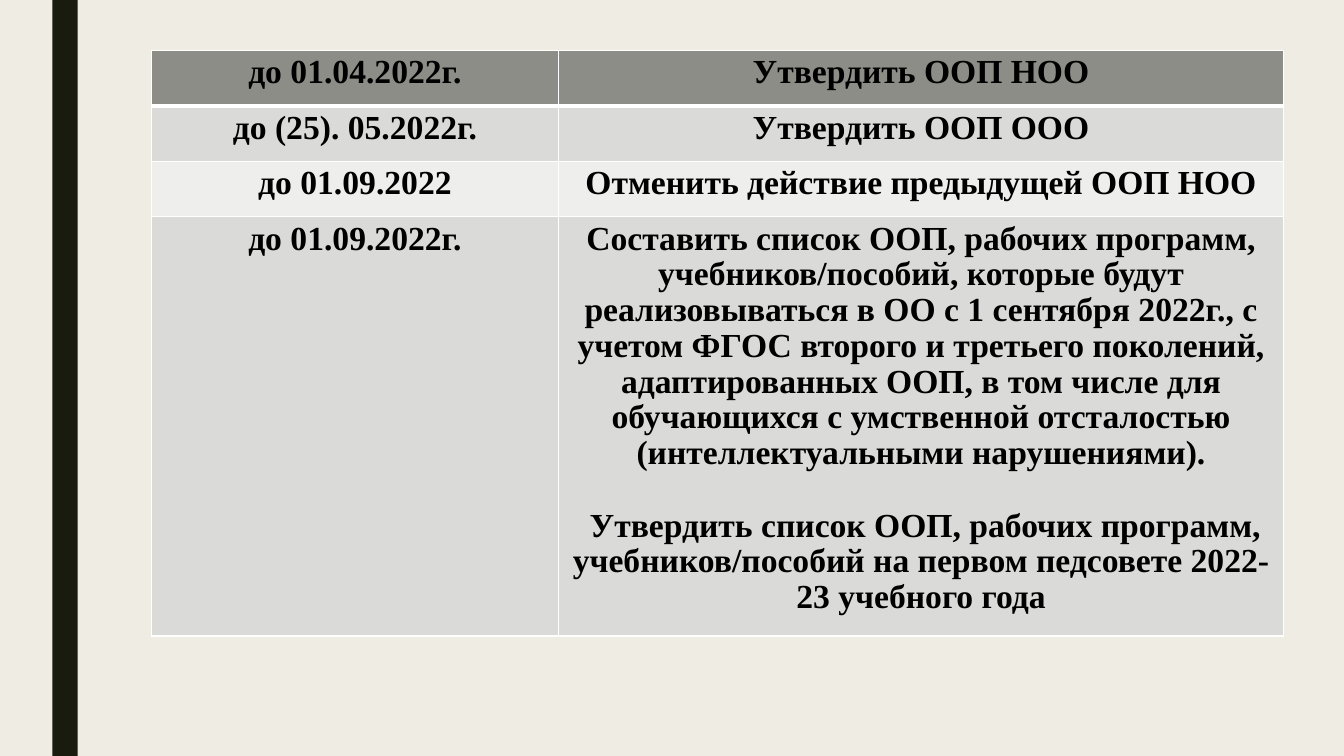
from pptx import Presentation
from pptx import util as u
from pptx.dml.color import RGBColor
from pptx.enum import shapes, text
from pptx.oxml import parse_xml
from pptx.oxml.ns import nsdecls

COLORS = {"page": "EFEDE3", "bar": "191B0E", "head": "8C8D86",
          "odd": "DADBD9", "even": "EEEEED", "rule": "FFFFFF", "ink": "000000"}
FONT = "Times New Roman"
SIZE = u.Pt(24)
LEAD = 0.96  # line spacing

PLAN = [
    ("до 01.04.2022г.", ["Утвердить ООП НОО"]),
    ("до (25). 05.2022г.", ["Утвердить ООП ООО"]),
    ("до 01.09.2022", ["Отменить действие предыдущей ООП НОО"]),
    ("до 01.09.2022г.", [
        "Составить список ООП, рабочих программ, учебников/пособий, которые "
        "будут реализовываться в ОО с 1 сентября 2022г., с учетом ФГОС второго "
        "и третьего поколений, адаптированных ООП, в том числе для обучающихся "
        "с умственной отсталостью (интеллектуальными нарушениями).",
        " Утвердить список ООП, рабочих программ, учебников/пособий на первом "
        "педсовете 2022-23 учебного года"]),
]


def color(key):
    return RGBColor.from_string(COLORS[key])


def paint(obj, key):
    obj.fill.solid()
    obj.fill.fore_color.rgb = color(key)


def add_bar(slide, left, top, width, height):
    bar = slide.shapes.add_shape(shapes.MSO_SHAPE.RECTANGLE, u.Inches(left),
                                 u.Inches(top), u.Inches(width), u.Inches(height))
    bar.shadow.inherit = False
    paint(bar, "bar")
    bar.line.fill.background()


def set_rules(cell, above, below):
    """Draw the four cell borders; widths in points."""
    props = cell._tc.get_or_add_tcPr()
    sides = {"lnL": 1, "lnR": 1, "lnT": above, "lnB": below}
    for spot, (side, width) in enumerate(sides.items()):
        props.insert(spot, parse_xml(
            f'<a:{side} {nsdecls("a")} w="{u.Pt(width)}"><a:solidFill>'
            f'<a:srgbClr val="{COLORS["rule"]}"/></a:solidFill></a:{side}>'))


def fill_cell(cell, lines):
    frame = cell.text_frame
    frame.text = "\n".join(lines)
    for spot, para in enumerate(frame.paragraphs):
        para.alignment = text.PP_ALIGN.CENTER
        para.line_spacing = LEAD
        if spot:
            para.space_before = u.Pt(26.5)  # one line apart
        for run in para.runs:
            run.font.name = FONT
            run.font.size = SIZE
            run.font.bold = True
            run.font.color.rgb = color("ink")


def add_plan(slide, left, top, width, height):
    table = slide.shapes.add_table(len(PLAN), 2, u.Inches(left), u.Inches(top),
                                   u.Inches(width), u.Inches(height)).table
    dates, row_high = 4.04, 0.55
    table.columns[0].width = u.Inches(dates)
    table.columns[1].width = u.Inches(width - dates)
    last = len(PLAN) - 1
    for r, (date, tasks) in enumerate(PLAN):
        high = row_high if r < last else height - last * row_high
        table.rows[r].height = u.Inches(high)
        shade = "head" if r == 0 else "odd" if r % 2 else "even"
        for cell, lines in zip(table.rows[r].cells, ([date], tasks)):
            fill_cell(cell, lines)
            paint(cell, shade)
            # Thick rule under the heading row
            set_rules(cell, 3 if r == 1 else 1, 3 if r == 0 else 1)


def main():
    deck = Presentation()
    deck.slide_width, deck.slide_height = u.Inches(13.33), u.Inches(7.5)
    slide = deck.slides.add_slide(deck.slide_layouts[6])
    paint(slide.background, "page")
    add_bar(slide, 0.52, 0, 0.25, 7.5)
    add_plan(slide, 1.5, 0.5, 11.23, 5.81)
    deck.save("out.pptx")


if __name__ == "__main__":
    main()
